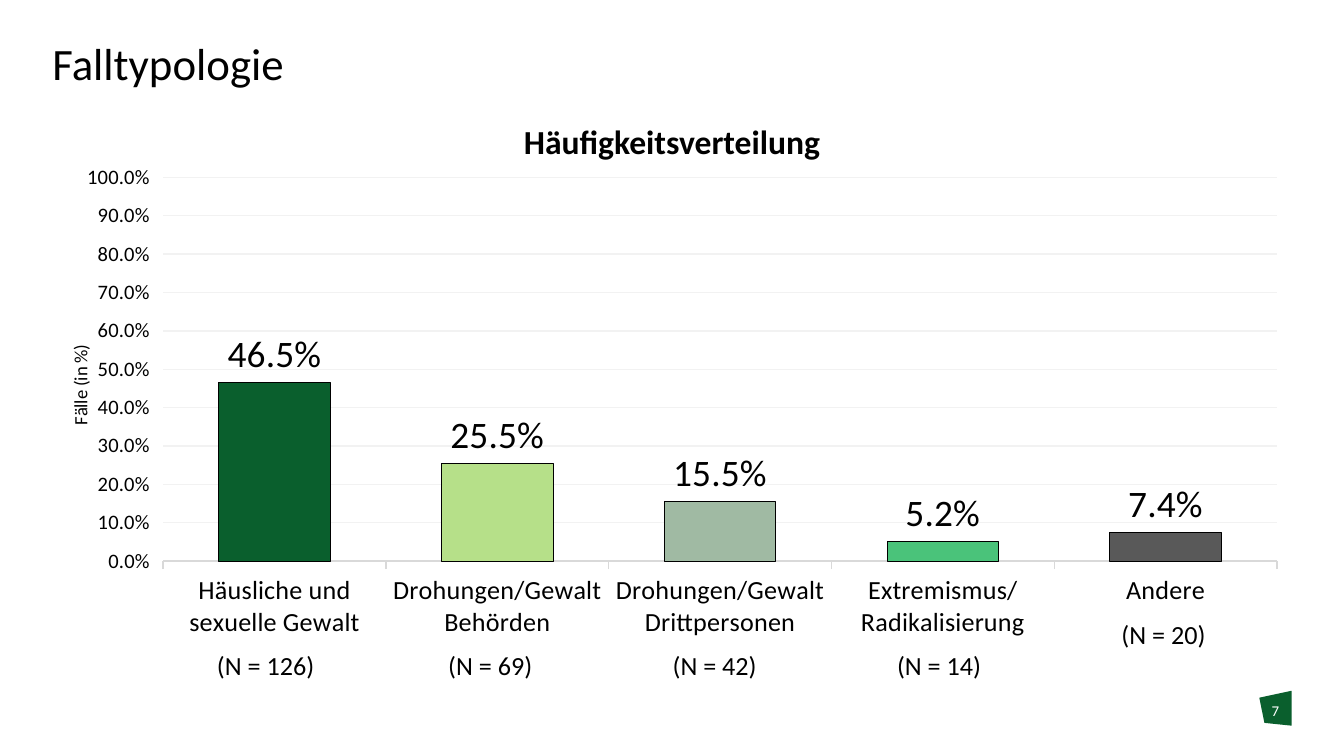
from lxml.etree import SubElement
from pptx import Presentation
from pptx.chart.data import CategoryChartData
from pptx.dml.color import RGBColor
from pptx.enum.chart import XL_CHART_TYPE, XL_LABEL_POSITION, XL_TICK_MARK
from pptx.enum.shapes import MSO_SHAPE
from pptx.enum.text import MSO_ANCHOR, PP_ALIGN
from pptx.oxml.ns import qn
from pptx.util import Inches, Pt

WIDE = Inches(10)
HIGH = WIDE * 9 // 16
FONT = "Calibri"
BLACK = RGBColor(0, 0, 0)
WHITE = RGBColor(0xFF, 0xFF, 0xFF)
GREEN = RGBColor(0x0A, 0x5F, 0x2D)
LIME = RGBColor(0xB6, 0xE0, 0x89)
SAGE = RGBColor(0xA0, 0xBA, 0xA3)
MINT = RGBColor(0x4A, 0xC3, 0x7A)
GREY = RGBColor(0x59, 0x59, 0x59)
RULE = RGBColor(0xD9, 0xD9, 0xD9)
GRID = RGBColor(0xF2, 0xF2, 0xF2)

CASES = [
    ("Häusliche und sexuelle Gewalt", 0.465, 126, GREEN),
    ("Drohungen/Gewalt Behörden", 0.255, 69, LIME),
    ("Drohungen/Gewalt Drittpersonen", 0.155, 42, SAGE),
    ("Extremismus/ Radikalisierung", 0.052, 14, MINT),
    ("Andere", 0.074, 20, GREY),
]


def area(left, top, width, height):
    """Turn inches into a box."""
    return tuple(Inches(n) for n in (left, top, width, height))


def style(font, size, color=BLACK, bold=False):
    """Set the look of a font."""
    font.name, font.size, font.bold = FONT, Pt(size), bold
    font.color.rgb = color


def write(shape, text, size, color=BLACK, bold=False, align=PP_ALIGN.CENTER, inset=True):
    """Put one styled paragraph into a shape."""
    frame = shape.text_frame
    frame.word_wrap = True
    if not inset:
        frame.margin_left = frame.margin_right = 0
        frame.margin_top = frame.margin_bottom = 0
    line = frame.paragraphs[0]
    line.text, line.alignment = text, align
    style(line.font, size, color, bold)
    return frame


def add_title(slide, box):
    """Place the slide title."""
    title = slide.shapes.title
    title.left, title.top, title.width, title.height = box
    frame = write(title, "Falltypologie", 24, align=PP_ALIGN.LEFT, inset=False)
    frame.vertical_anchor = MSO_ANCHOR.BOTTOM
    frame.paragraphs[0].line_spacing = 0.9


def add_badge(slide, box):
    """Draw the slanted page badge and its number."""
    left, top, width, height = box
    spots = [(0, 0.2), (1, 0), (1, 1), (0.16, 0.92)]
    points = [(int(left + x * width), int(top + y * height)) for x, y in spots]
    build = slide.shapes.build_freeform(*points[0])
    build.add_line_segments(points[1:], close=True)
    badge = build.convert_to_shape()
    badge.shadow.inherit = False
    badge.fill.solid()
    badge.fill.fore_color.rgb = GREEN
    badge.line.fill.background()
    label = slide.shapes.add_textbox(left, int(top + 0.3 * height), width, height)
    write(label, "7", 8, WHITE, inset=False)


def add_heading(slide, box):
    """Place the heading above the chart."""
    shape = slide.shapes.add_shape(MSO_SHAPE.RECTANGLE, *box)
    shape.shadow.inherit = False
    shape.fill.solid()
    shape.fill.fore_color.rgb = WHITE
    shape.line.fill.background()
    frame = write(shape, "Häufigkeitsverteilung", 18, bold=True, inset=False)
    frame.vertical_anchor = MSO_ANCHOR.MIDDLE


def fix_place(owner, spot, parts):
    """Give a chart part a manual layout in shares of the chart."""
    layout = owner.find(qn("c:layout"))
    if layout is None:
        layout = SubElement(owner, qn("c:layout"))
        owner.insert(spot, layout)
    manual = SubElement(layout, qn("c:manualLayout"))
    for name, value in parts.items():
        SubElement(manual, qn("c:" + name)).set("val", str(value))


def style_axes(chart):
    """Format both axes, the grid and the axis title."""
    base = chart.category_axis
    base.major_tick_mark = XL_TICK_MARK.OUTSIDE
    base.format.line.color.rgb = RULE
    base.format.line.width = Pt(0.75)
    style(base.tick_labels.font, 14)
    scale = chart.value_axis
    scale.minimum_scale, scale.maximum_scale, scale.major_unit = 0, 1, 0.1
    scale.major_tick_mark = XL_TICK_MARK.OUTSIDE
    scale.format.line.fill.background()
    scale.major_gridlines.format.line.color.rgb = GRID
    scale.major_gridlines.format.line.width = Pt(0.75)
    scale.tick_labels.number_format = "0.0%"
    scale.tick_labels.number_format_is_linked = False
    style(scale.tick_labels.font, 11)
    title = scale.axis_title
    line = title.text_frame.paragraphs[0]
    line.text = "Fälle (in %)"
    style(line.font, 10)
    fix_place(title._element, 1, {"xMode": "edge", "yMode": "edge", "x": 0.01, "y": 0.35})


def add_bars(slide, box):
    """Place the column chart of case shares."""
    data = CategoryChartData(number_format="0.0%")
    data.categories = [case[0] for case in CASES]
    data.add_series("Series 1", [case[1] for case in CASES])
    kind = XL_CHART_TYPE.COLUMN_CLUSTERED
    chart = slide.shapes.add_chart(kind, *box, data).chart
    chart.has_legend = chart.has_title = False
    style(chart.font, 10)
    style_axes(chart)
    plot = chart.plots[0]
    fix_place(plot._element.getparent(), 0, {
        "layoutTarget": "inner", "xMode": "edge", "yMode": "edge",
        "x": 0.089, "y": 0.045, "w": 0.895, "h": 0.714})
    plot.gap_width, plot.vary_by_categories = 100, False
    bars = plot.series[0]
    bars.format.fill.solid()
    bars.format.fill.fore_color.rgb = GREEN
    bars.format.line.color.rgb = BLACK
    bars.format.line.width = Pt(0.5)
    for spot, case in enumerate(CASES):
        look = bars.points[spot].format
        look.fill.solid()
        look.fill.fore_color.rgb = case[3]
        look.line.color.rgb = BLACK
        look.line.width = Pt(0.5)
    labels = bars.data_labels
    labels.show_value = True
    labels.position = XL_LABEL_POSITION.OUTSIDE_END
    labels.number_format, labels.number_format_is_linked = "0.0%", False
    style(labels.font, 20)


def add_counts(slide, box):
    """Place one case count under each column, higher under a short name."""
    left, top, width, height = box
    step = width / len(CASES)
    for spot, (name, _, count, _) in enumerate(CASES):
        lift = 0 if " " in name else 0.68 * height
        label = slide.shapes.add_textbox(
            int(left + spot * step), int(top - lift), int(0.92 * step), height)
        write(label, f"(N = {count})", 14)


def main():
    """Build and save the slide."""
    deck = Presentation()
    deck.slide_width, deck.slide_height = WIDE, HIGH
    slide = deck.slides.add_slide(deck.slide_layouts[5])
    add_badge(slide, area(9.37, 5.14, 0.24, 0.26))
    add_title(slide, area(0.39, 0, 9.22, 0.67))
    add_bars(slide, area(0.39, 1.14, 9.26, 4))
    add_heading(slide, area(0.39, 0.94, 9.22, 0.22))
    add_counts(slide, area(1.21, 4.78, 8.35, 0.34))
    deck.save("out.pptx")


if __name__ == "__main__":
    main()
